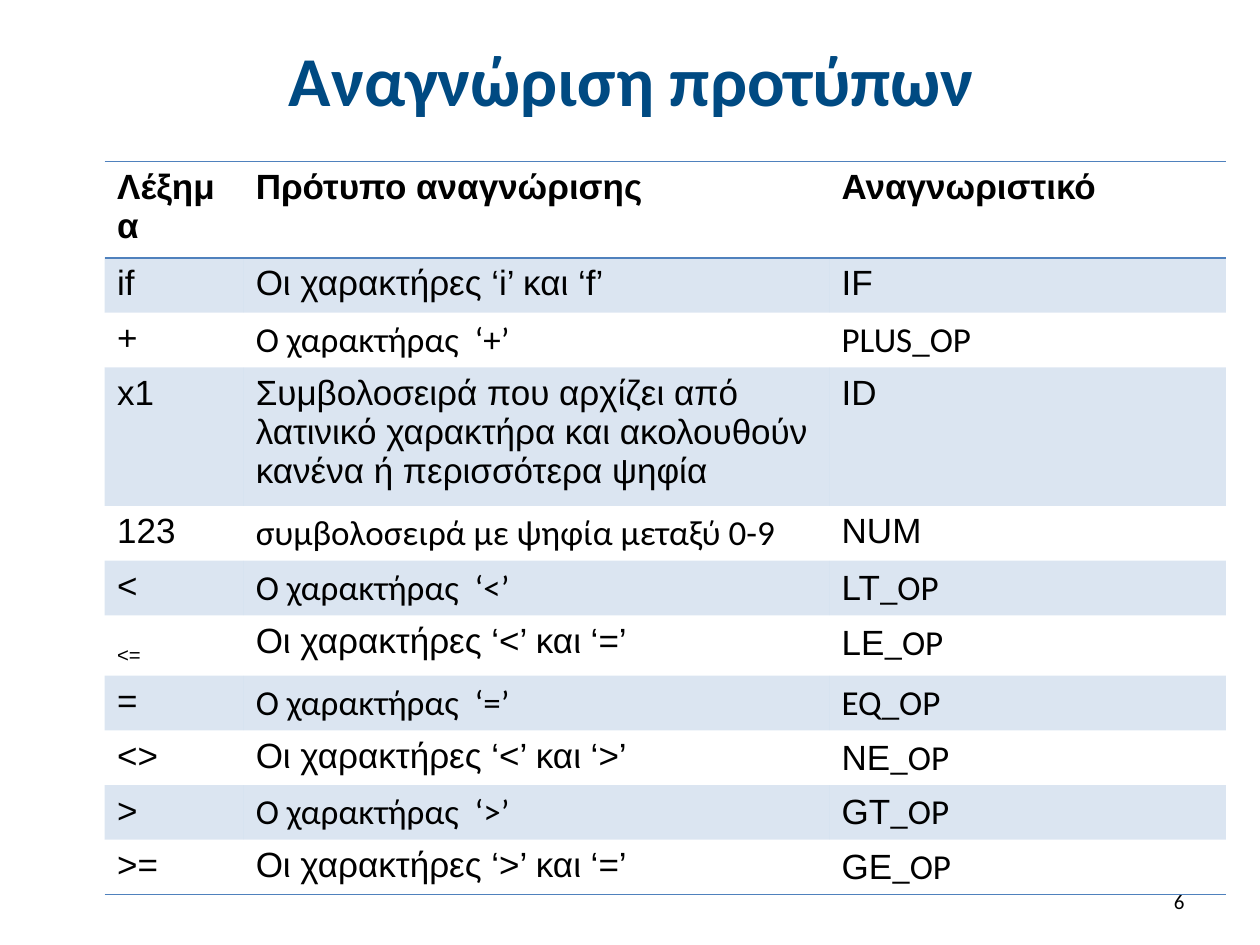
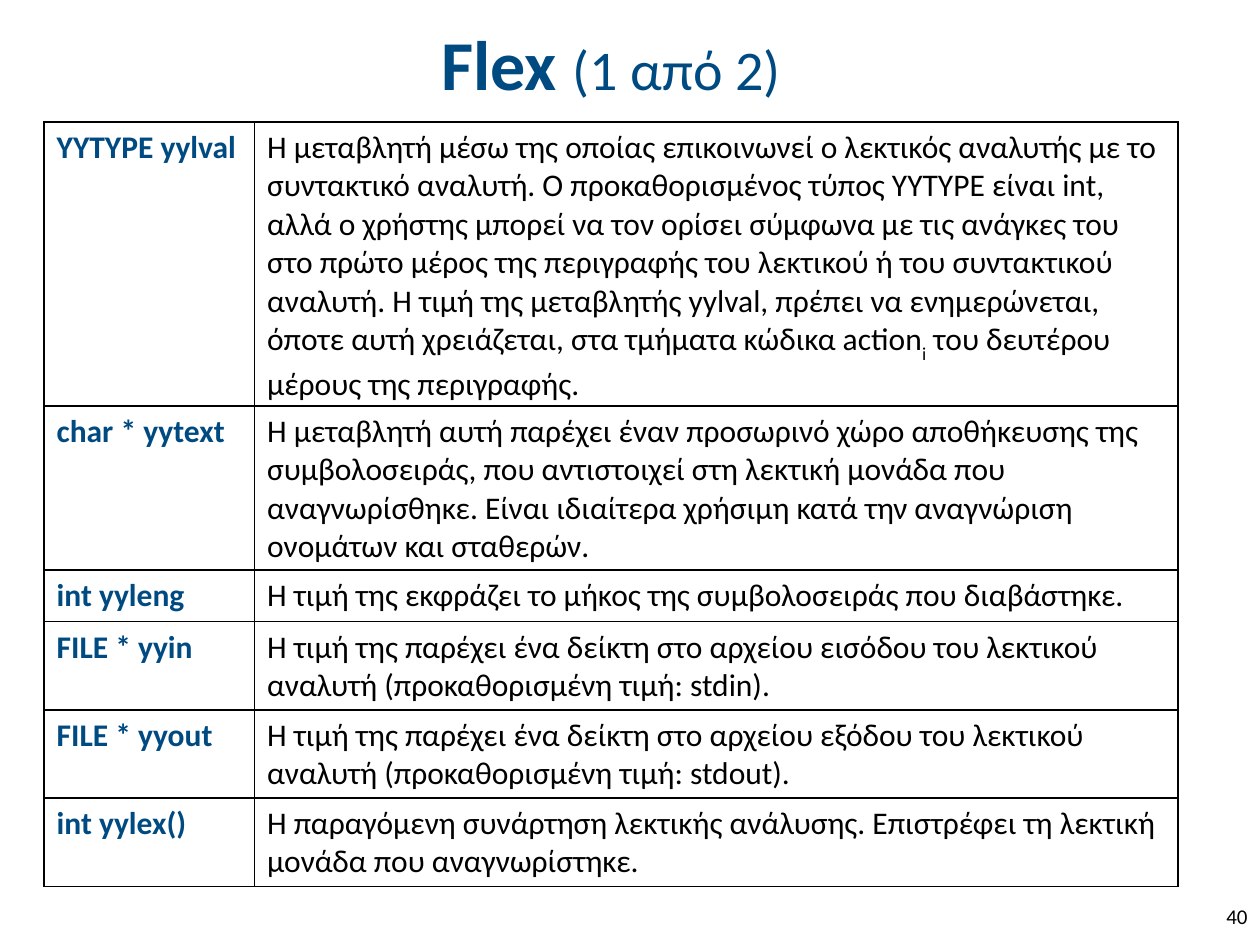
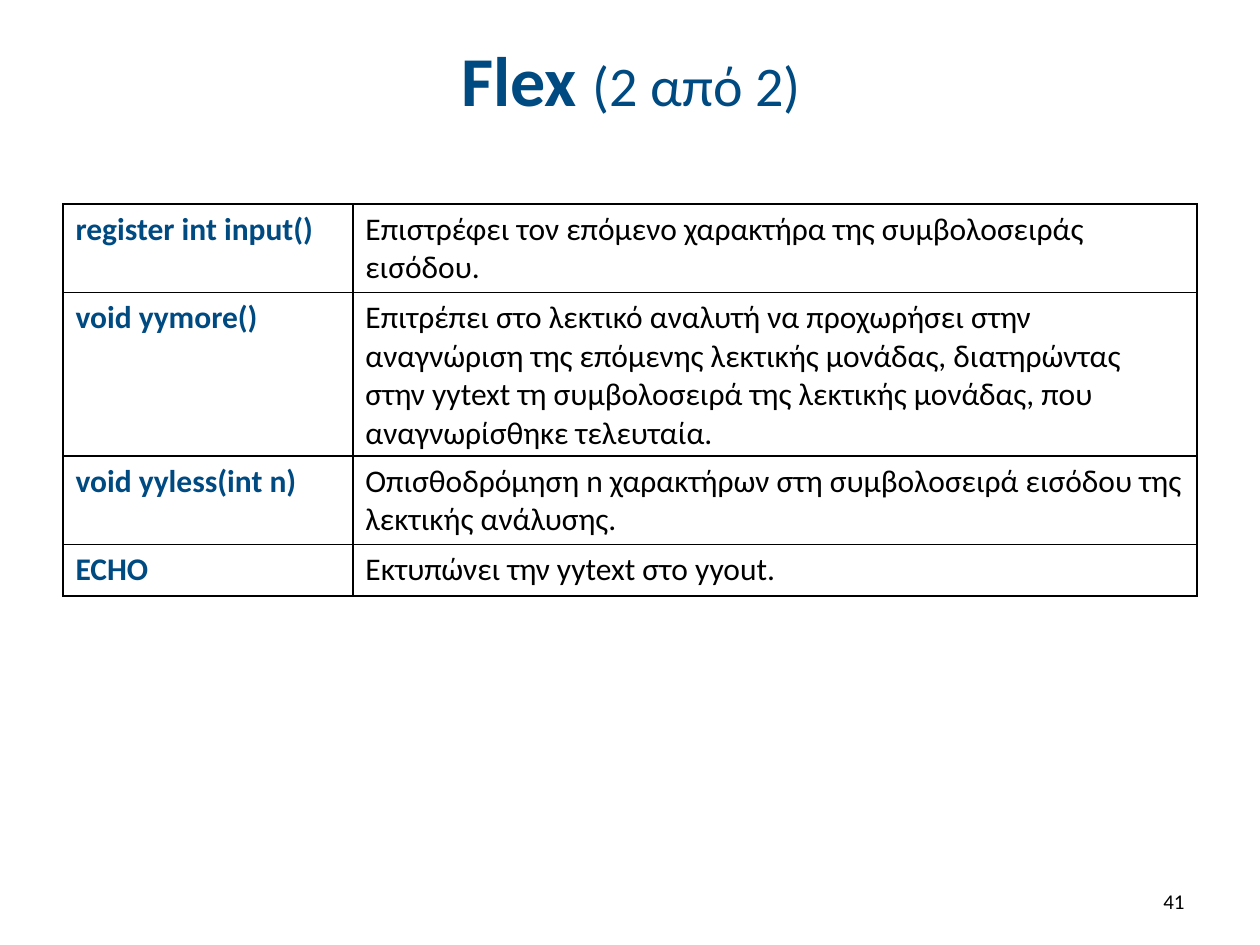
import lxml.etree
import pptx
import pptx.dml.color
import pptx.enum.text
import pptx.oxml.ns
import pptx.util

GRID_UNIT = pptx.util.Inches(0.1)
GRID_COLUMNS, GRID_ROWS = 100, 75
NAVY, BLACK, BLUE = "004A82", "000000", "4F81BD"
BODY_FONT, TABLE_FONT = "Calibri", "Arial"
TITLE_BOX = (5.1, 1.3, 90, 9.9)
NUMBER_BOX = (71.7, 69.5, 23.3, 4)
ROW_HEIGHT = 4.1
PLAIN_TABLE_STYLE = "{2D5ABB26-0587-4C30-8999-92F81FD0307C}"
BORDER_SIDES = ("L", "R", "T", "B")

TOKEN_HEADER = ("Λέξημα", "Πρότυπο αναγνώρισης", "Αναγνωριστικό")
CALIBRI = {"font": BODY_FONT}
OPERATOR_SUFFIX = ("_OP", CALIBRI)
TOKEN_ROWS = (
    ("if", "Οι χαρακτήρες ‘i’ και ‘f’", "IF"),
    ("+", [("Ο χαρακτήρας  ‘+’", CALIBRI)], [("PLUS_OP", CALIBRI)]),
    ("x1", "Συμβολοσειρά που αρχίζει από λατινικό χαρακτήρα και ακολουθούν κανένα ή περισσότερα ψηφία", "ID"),
    ("123", [("συμβολοσειρά με ψηφία μεταξύ 0-9", CALIBRI)], "NUM"),
    ("<", [("Ο χαρακτήρας  ‘<’", CALIBRI)], [("LT", {}), OPERATOR_SUFFIX]),
    ([("<=", {"baseline": -25})], "Οι χαρακτήρες ‘<’ και ‘=’", [("LE", {}), OPERATOR_SUFFIX]),
    ("=", [("Ο χαρακτήρας  ‘=’", CALIBRI)], [("EQ_OP", CALIBRI)]),
    ("<>", "Οι χαρακτήρες ‘<’ και ‘>’", [("NE", {}), OPERATOR_SUFFIX]),
    (">", [("Ο χαρακτήρας  ‘>’", CALIBRI)], [("GT", {}), OPERATOR_SUFFIX]),
    (">=", "Οι χαρακτήρες ‘>’ και ‘=’", [("GE", {}), OPERATOR_SUFFIX]),
)

FLEX_VARIABLES = (
    ("YYTYPE yylval", [
        ("Η μεταβλητή μέσω της οποίας επικοινωνεί ο λεκτικός αναλυτής με το συντακτικό αναλυτή. "
         "Ο προκαθορισμένος τύπος YYTYPE είναι int, αλλά ο χρήστης μπορεί να τον ορίσει σύμφωνα με "
         "τις ανάγκες του στο πρώτο μέρος της περιγραφής του λεκτικού ή του συντακτικού αναλυτή. "
         "Η τιμή της μεταβλητής yylval, πρέπει να ενημερώνεται, όποτε αυτή χρειάζεται, στα τμήματα "
         "κώδικα action", {}),
        ("i", {"baseline": -30}),
        (" του δευτέρου μέρους της περιγραφής.", {})]),
    ("char * yytext",
     "Η μεταβλητή αυτή παρέχει έναν προσωρινό χώρο αποθήκευσης της συμβολοσειράς, που αντιστοιχεί "
     "στη λεκτική μονάδα που αναγνωρίσθηκε. Είναι ιδιαίτερα χρήσιμη κατά την αναγνώριση ονομάτων "
     "και σταθερών."),
    ("int yyleng", "Η τιμή της εκφράζει το μήκος της συμβολοσειράς που διαβάστηκε."),
    ("FILE * yyin",
     "Η τιμή της παρέχει ένα δείκτη στο αρχείου εισόδου του λεκτικού αναλυτή (προκαθορισμένη τιμή: stdin)."),
    ("FILE * yyout",
     "Η τιμή της παρέχει ένα δείκτη στο αρχείου εξόδου του λεκτικού αναλυτή (προκαθορισμένη τιμή: stdout)."),
    ("int yylex()",
     "Η παραγόμενη συνάρτηση λεκτικής ανάλυσης. Επιστρέφει τη λεκτική μονάδα που αναγνωρίστηκε."),
)

FLEX_FUNCTIONS = (
    ("register int input()", "Επιστρέφει τον επόμενο χαρακτήρα της συμβολοσειράς εισόδου."),
    ("void yymore()",
     "Επιτρέπει στο λεκτικό αναλυτή να προχωρήσει στην αναγνώριση της επόμενης λεκτικής μονάδας, "
     "διατηρώντας στην yytext τη συμβολοσειρά της λεκτικής μονάδας, που αναγνωρίσθηκε τελευταία."),
    ("void yyless(int n)", "Οπισθοδρόμηση n χαρακτήρων στη συμβολοσειρά εισόδου της λεκτικής ανάλυσης."),
    ("ECHO", "Εκτυπώνει την yytext στο yyout."),
)


def units(count):
    """Convert grid units to a length."""
    return round(count * GRID_UNIT)


def rgb(value):
    """Turn a hex string into a colour."""
    return pptx.dml.color.RGBColor.from_string(value)


def write_runs(paragraph, content, **defaults):
    """Write a string, or pairs of text and style, into a paragraph."""
    pieces = [(content, {})] if isinstance(content, str) else content
    for text, changes in pieces:
        style = {"font": BODY_FONT, "color": BLACK, "bold": False, "baseline": 0, **defaults, **changes}
        run = paragraph.add_run()
        run.text = text
        run.font.name = style["font"]
        run.font.size = pptx.util.Pt(style["size"])
        run.font.bold = style["bold"]
        run.font.color.rgb = rgb(style["color"])
        if style["baseline"]:
            run.font._element.set("baseline", str(style["baseline"] * 1000))


def add_text(slide, box, content, alignment, **style):
    """Add a vertically centred line of text in a box of grid units."""
    shape = slide.shapes.add_textbox(*map(units, box))
    text_frame = shape.text_frame
    text_frame.word_wrap = True
    text_frame.vertical_anchor = pptx.enum.text.MSO_ANCHOR.MIDDLE
    paragraph = text_frame.paragraphs[0]
    paragraph.alignment = alignment
    write_runs(paragraph, content, **style)


def add_slide(presentation, title, number, title_box=TITLE_BOX, number_box=NUMBER_BOX):
    """Add a blank slide with its title and slide number."""
    slide = presentation.slides.add_slide(presentation.slide_layouts[6])
    add_text(slide, title_box, title, pptx.enum.text.PP_ALIGN.CENTER, size=40, color=NAVY, bold=True)
    add_text(slide, number_box, str(number), pptx.enum.text.PP_ALIGN.RIGHT, size=12)
    return slide


def add_plain_table(slide, box, column_widths, row_count):
    """Add a table without style whose rows grow with their text."""
    frame = slide.shapes.add_table(row_count, len(column_widths), *map(units, box))
    table = frame.table
    properties = table._tbl.tblPr
    properties.find(pptx.oxml.ns.qn("a:tableStyleId")).text = PLAIN_TABLE_STYLE
    table.horz_banding = False
    table.first_row = False
    for column, width in zip(table.columns, column_widths):
        column.width = units(width)
    for row in table.rows:
        row.height = units(ROW_HEIGHT)
    frame.height = units(box[3])
    return table


def set_borders(cell, sides, color):
    """Draw one-point borders on the given sides of a cell."""
    properties = cell._tc.get_or_add_tcPr()
    for side in sides:
        line = lxml.etree.SubElement(properties, pptx.oxml.ns.qn(f"a:ln{side}"), w=str(pptx.util.Pt(1)))
        fill = lxml.etree.SubElement(line, pptx.oxml.ns.qn("a:solidFill"))
        lxml.etree.SubElement(fill, pptx.oxml.ns.qn("a:srgbClr"), val=color)


def fill_cell(cell, banded):
    """Give a cell a light blue band or no fill."""
    if not banded:
        cell.fill.background()
        return
    cell.fill.solid()
    cell.fill.fore_color.rgb = rgb(BLUE)
    color = next(cell._tc.tcPr.find(pptx.oxml.ns.qn("a:solidFill")).iterchildren())
    lxml.etree.SubElement(color, pptx.oxml.ns.qn("a:alpha"), val="20000")


def add_token_table(slide, box, column_widths):
    """Add the banded table of lexemes, patterns and identifiers."""
    rows = (TOKEN_HEADER, *TOKEN_ROWS)
    table = add_plain_table(slide, box, column_widths, len(rows))
    for row_index, contents in enumerate(rows):
        is_header = row_index == 0
        sides = ("T", "B") if is_header else ("B",) if row_index == len(TOKEN_ROWS) else ()
        for column_index, content in enumerate(contents):
            cell = table.cell(row_index, column_index)
            set_borders(cell, sides, BLUE)
            fill_cell(cell, row_index % 2 == 1)
            paragraph = cell.text_frame.paragraphs[0]
            write_runs(paragraph, content, size=20, font=TABLE_FONT, bold=is_header)


def add_definition_table(slide, box, column_widths, definitions):
    """Add a ruled table of bold terms and their descriptions."""
    table = add_plain_table(slide, box, column_widths, len(definitions))
    column_styles = ({"color": NAVY, "bold": True}, {})
    for row_index, contents in enumerate(definitions):
        for column_index, (content, style) in enumerate(zip(contents, column_styles)):
            cell = table.cell(row_index, column_index)
            set_borders(cell, BORDER_SIDES, BLACK)
            fill_cell(cell, False)
            write_runs(cell.text_frame.paragraphs[0], content, size=18, **style)


def flex_title(part):
    """Compose the title of one of the two Flex slides."""
    return [("Flex ", {}), (f"({part} από 2)", {"size": 32, "bold": False})]


def main():
    """Build the three slides and save them."""
    presentation = pptx.Presentation()
    presentation.slide_width = units(GRID_COLUMNS)
    presentation.slide_height = units(GRID_ROWS)

    patterns = add_slide(presentation, "Αναγνώριση προτύπων", 6)
    add_token_table(patterns, (8.3, 12.8, 89, 54.3), (11, 46.5, 31.5))

    variables = add_slide(presentation, flex_title(1), 40, (3.5, 0, 90, 9.9), (76.7, 70.7, 23.3, 4))
    add_definition_table(variables, (3.5, 9.7, 90, 60.1), (16.7, 73.3), FLEX_VARIABLES)

    functions = add_slide(presentation, flex_title(2), 41)
    add_definition_table(functions, (5, 16.2, 90, 31.1), (23, 67), FLEX_FUNCTIONS)

    presentation.save("out.pptx")


if __name__ == "__main__":
    main()
